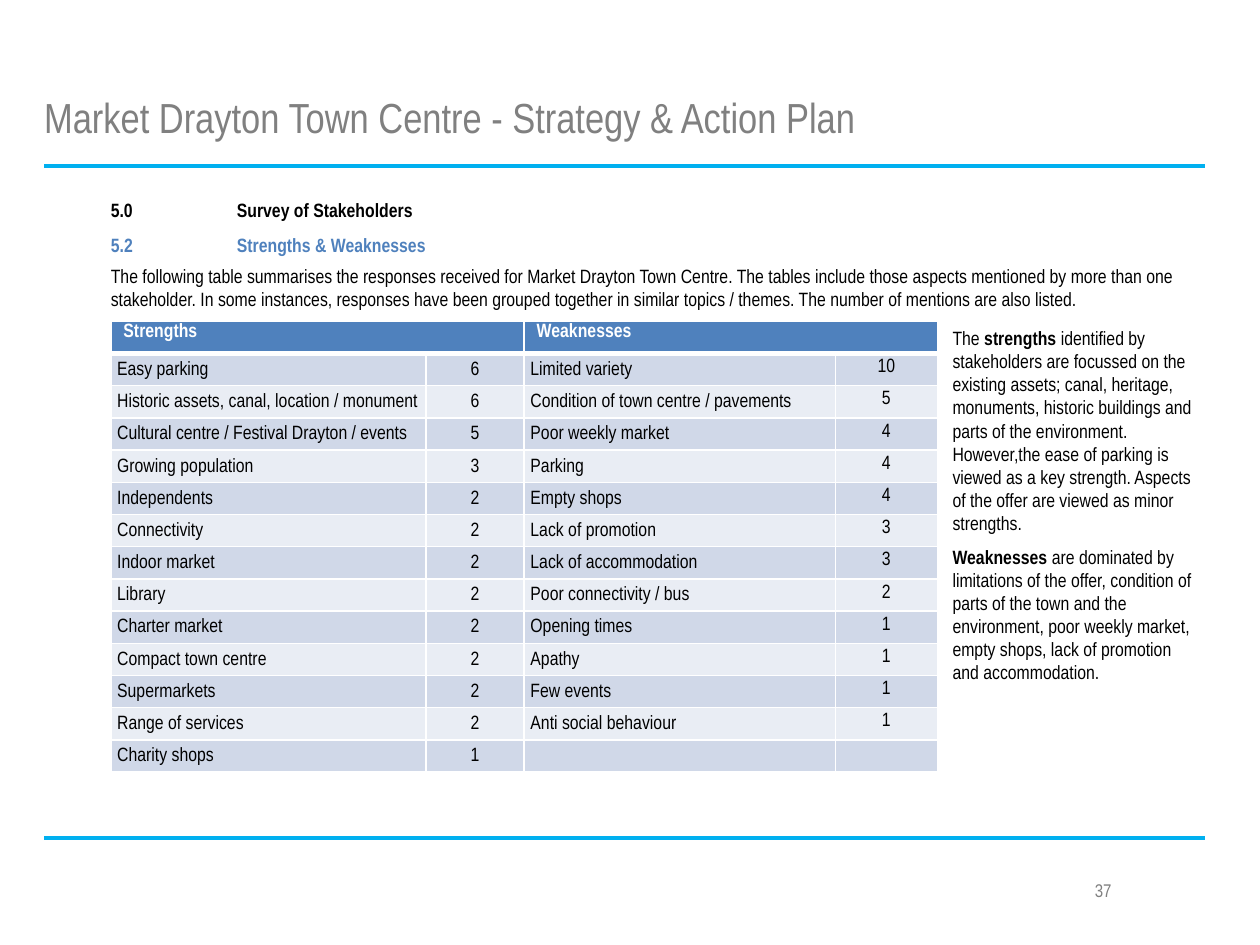
from lxml import etree
from pptx import Presentation
from pptx import util as u
from pptx.dml.color import RGBColor
from pptx.enum import shapes, text
from pptx.oxml.ns import qn

FONT = "Arial Narrow"
COLOURS = {
    "grey": "808080", "rule": "00B0F0", "heading": "4F81BD", "text": "000000",
    "white": "FFFFFF", "odd row": "D0D8E8", "even row": "E9EDF4",
}

prs = Presentation()
prs.slide_width, prs.slide_height = u.Inches(10), u.Inches(7.5)
COL, ROW = prs.slide_width / 100, prs.slide_height / 75

slide = prs.slides.add_slide(prs.slide_layouts[5])


def add_run(paragraph, words, colour="text", size=11, bold=False):
    run = paragraph.add_run()
    run.text = words
    run.font.name, run.font.size, run.font.bold = FONT, u.Pt(size), bold
    run.font.color.rgb = RGBColor.from_string(COLOURS[colour])


def add_box(left, top, width, height, inset=0):
    """Add a wrapping text box, measured in grid columns and rows."""
    box = slide.shapes.add_textbox(
        int(left * COL), int(top * ROW), int(width * COL), int(height * ROW))
    frame = box.text_frame
    frame.word_wrap = True
    frame.margin_left = frame.margin_right = int(inset * COL)
    frame.margin_top = frame.margin_bottom = int(inset * ROW / 2)
    return frame


# Title and the rules above and below the content
title = slide.shapes.title
title.left, title.top = int(3.5 * COL), int(3 * ROW)
title.width, title.height = int(95.2 * COL), int(12.5 * ROW)
frame = title.text_frame
frame.margin_left = frame.margin_right = frame.margin_top = frame.margin_bottom = 0
frame.vertical_anchor = text.MSO_ANCHOR.MIDDLE
frame.paragraphs[0].alignment = text.PP_ALIGN.LEFT
add_run(frame.paragraphs[0], "Market Drayton Town Centre - Strategy & Action Plan", "grey", 24)

for y in (13.2, 66.5):
    rule = slide.shapes.add_connector(
        shapes.MSO_CONNECTOR.STRAIGHT,
        int(3.5 * COL), int(y * ROW), int(95.6 * COL), int(y * ROW))
    rule.line.color.rgb = RGBColor.from_string(COLOURS["rule"])
    rule.line.width = u.Pt(2.25)
    etree.SubElement(rule._element.spPr, qn("a:effectLst"))

# Numbered headings
for number, heading, colour, top, width in (
    ("5.0", "Survey of Stakeholders", "text", 15.7, 42),
    ("5.2", "Strengths & Weaknesses", "heading", 18.5, 27.8),
):
    paragraph = add_box(8.8, top, width, 2.9).paragraphs[0]
    tabs = etree.SubElement(paragraph._p.get_or_add_pPr(), qn("a:tabLst"))
    etree.SubElement(tabs, qn("a:tab"), pos=str(int(10 * COL)), algn="l")
    add_run(paragraph, f"{number}\t{heading}", colour, bold=True)

introduction = add_box(8.8, 21, 86.6, 5.5).paragraphs[0]
add_run(introduction,
        "The following table summarises the responses received for Market Drayton Town "
        "Centre. The tables include those aspects mentioned by more than one stakeholder. "
        "In some instances, responses have been grouped together in similar topics / "
        "themes. The number of mentions are also listed.")

# Table of mentions
mentions = [
    ("Easy parking", "6", "Limited variety", "10"),
    ("Historic assets, canal, location / monument", "6",
     "Condition of town centre / pavements", "5"),
    ("Cultural centre / Festival Drayton / events", "5", "Poor weekly market", "4"),
    ("Growing population", "3", "Parking", "4"),
    ("Independents", "2", "Empty shops", "4"),
    ("Connectivity", "2", "Lack of promotion", "3"),
    ("Indoor market", "2", "Lack of accommodation", "3"),
    ("Library", "2", "Poor connectivity / bus", "2"),
    ("Charter market", "2", "Opening times", "1"),
    ("Compact town centre", "2", "Apathy", "1"),
    ("Supermarkets", "2", "Few events", "1"),
    ("Range of services", "2", "Anti social behaviour", "1"),
    ("Charity shops", "1", "", ""),
]
rows = [("Strengths", "", "Weaknesses", "")] + mentions
widths = (25, 7.8, 24.7, 8.1)
table_height = int(35.8 * ROW)
table = slide.shapes.add_table(
    len(rows), len(widths), int(8.8 * COL), int(25.5 * ROW),
    int(sum(widths) * COL), table_height).table
for column, width in zip(table.columns, widths):
    column.width = int(width * COL)

for r, row in enumerate(rows):
    table.rows[r].height = table_height // len(rows)
    header = r == 0
    fill = "heading" if header else "odd row" if r % 2 else "even row"
    for c, words in enumerate(row):
        cell = table.cell(r, c)
        cell.margin_left = cell.margin_right = int((1 if header else 0.5) * COL)
        cell.margin_top, cell.margin_bottom = int(0.2 * ROW), int(0.5 * ROW)
        if not header:
            cell.vertical_anchor = (
                text.MSO_ANCHOR.MIDDLE if c == 3 else text.MSO_ANCHOR.BOTTOM)

        properties = cell._tc.get_or_add_tcPr()
        for side in "LRTB":
            heavy = (r, side) in ((0, "B"), (1, "T"))
            border = etree.SubElement(
                properties, qn(f"a:ln{side}"), w=str(u.Pt(3 if heavy else 1)))
            solid = etree.SubElement(border, qn("a:solidFill"))
            etree.SubElement(solid, qn("a:srgbClr"), val=COLOURS["white"])
        cell.fill.solid()
        cell.fill.fore_color.rgb = RGBColor.from_string(COLOURS[fill])

        paragraph = cell.text_frame.paragraphs[0]
        if c % 2:
            paragraph.alignment = text.PP_ALIGN.CENTER
        if words:
            add_run(paragraph, words, "white" if header else "text", bold=header)
        else:
            etree.SubElement(paragraph._p, qn("a:endParaRPr"), sz="1100")

for c in (0, 2):
    table.cell(0, c).merge(table.cell(0, c + 1))

# Commentary beside the table
commentary = add_box(75.6, 25.9, 19.8, 16.5)
findings = [
    [("The ", False), ("strengths", True),
     (" identified by stakeholders are focussed on the existing assets; canal, heritage, "
      "monuments, historic buildings and parts of the environment. However,the ease of "
      "parking is viewed as a key strength. Aspects of the offer are viewed as minor "
      "strengths.", False)],
    [("Weaknesses", True),
     (" are dominated by limitations of the offer, condition of parts of the town and the "
      "environment, poor weekly market, empty shops, lack of promotion and "
      "accommodation.", False)],
]
for i, finding in enumerate(findings):
    paragraph = commentary.add_paragraph() if i else commentary.paragraphs[0]
    paragraph.space_before = u.Pt(3 if i else 0)
    paragraph.space_after = u.Pt(3)
    for words, bold in finding:
        add_run(paragraph, words, bold=bold)

page_number = add_box(71.7, 69.3, 17.5, 5, inset=1).paragraphs[0]
page_number.alignment = text.PP_ALIGN.RIGHT
add_run(page_number, "37", "grey", 10.5)

prs.save("out.pptx")
